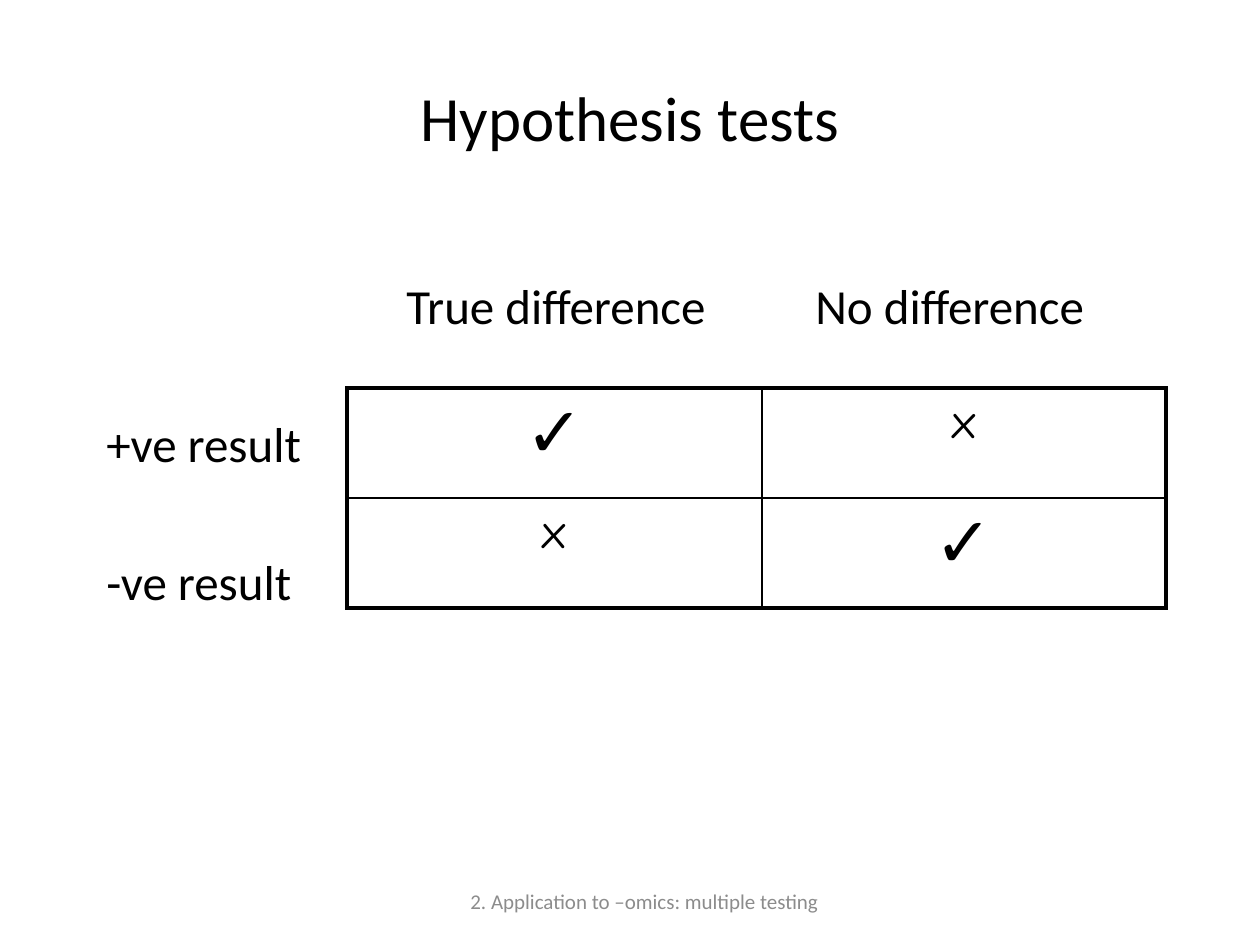
from lxml import etree
from pptx import Presentation
from pptx import util as u
from pptx.dml.color import RGBColor
from pptx.enum import text
from pptx.oxml.ns import qn

SCALE = 914400 / 126
BLACK = "000000"
GREY = "8C8C8C"
CENTER = text.PP_ALIGN.CENTER
LEFT = text.PP_ALIGN.LEFT


def px(n):
    return u.Emu(round(n * SCALE))


def color(value):
    return RGBColor.from_string(value)


def style(p, size, font="Calibri", fill=BLACK, align=CENTER):
    p.alignment = align
    p.font.size = u.Pt(size)
    p.font.name = font
    p.font.color.rgb = color(fill)


def add_text(s, box, words, size, fill=BLACK, align=CENTER):
    tf = s.shapes.add_textbox(*map(px, box)).text_frame
    tf.word_wrap = True
    tf.vertical_anchor = text.MSO_ANCHOR.MIDDLE
    p = tf.paragraphs[0]
    p.text = words
    style(p, size, fill=fill, align=align)


def set_border(cell, side, width):
    tag = qn(f"a:ln{side}")
    ln = etree.SubElement(cell._tc.get_or_add_tcPr(), tag, w=str(u.Pt(width)))
    fill = etree.SubElement(ln, qn("a:solidFill"))
    etree.SubElement(fill, qn("a:srgbClr"), val=BLACK)


def add_outcomes(s, box, widths, marks):
    table = s.shapes.add_table(len(marks), len(widths), *map(px, box)).table
    table.first_row = table.horz_banding = False
    for col, width in zip(table.columns, widths):
        col.width = px(width)
    last_row, last_col = len(marks) - 1, len(widths) - 1
    for i, row in enumerate(marks):
        for j, mark in enumerate(row):
            cell = table.cell(i, j)
            outer = {"L": j == 0, "R": j == last_col, "T": i == 0, "B": i == last_row}
            for side, is_outer in outer.items():
                set_border(cell, side, 2.25 if is_outer else 1)
            cell.fill.background()
            p = cell.text_frame.paragraphs[0]
            p.text = mark
            size = 40 if mark == "✓" else 28
            style(p, size, "Comic Neue")
            p.space_before = u.Pt(size * 0.2)


def add_labels(s, box, columns, rows):
    left, top, width, height = box
    for words, x in columns:
        add_text(s, (left + x, top, 360, height), words, 28, align=LEFT)
    for i, words in enumerate(rows, 1):
        add_text(s, (left, top + 138 * i, width, height), words, 28, align=LEFT)


def main():
    prs = Presentation()
    prs.slide_width, prs.slide_height = px(1260), px(945)
    s = prs.slides.add_slide(prs.slide_layouts[6])
    add_text(s, (63, 38, 1134, 157), "Hypothesis tests", 36)
    add_labels(
        s,
        (94, 270, 250, 70),
        [("True difference", 300), ("No difference", 709)],
        ["+ve result", "-ve result"],
    )
    add_outcomes(s, (347, 388, 819, 220), [415, 404], ["✓x", "x✓"])
    footer = "2. Application to –omics: multiple testing"
    add_text(s, (431, 876, 427, 50), footer, 12, GREY)
    prs.save("out.pptx")


if __name__ == "__main__":
    main()
